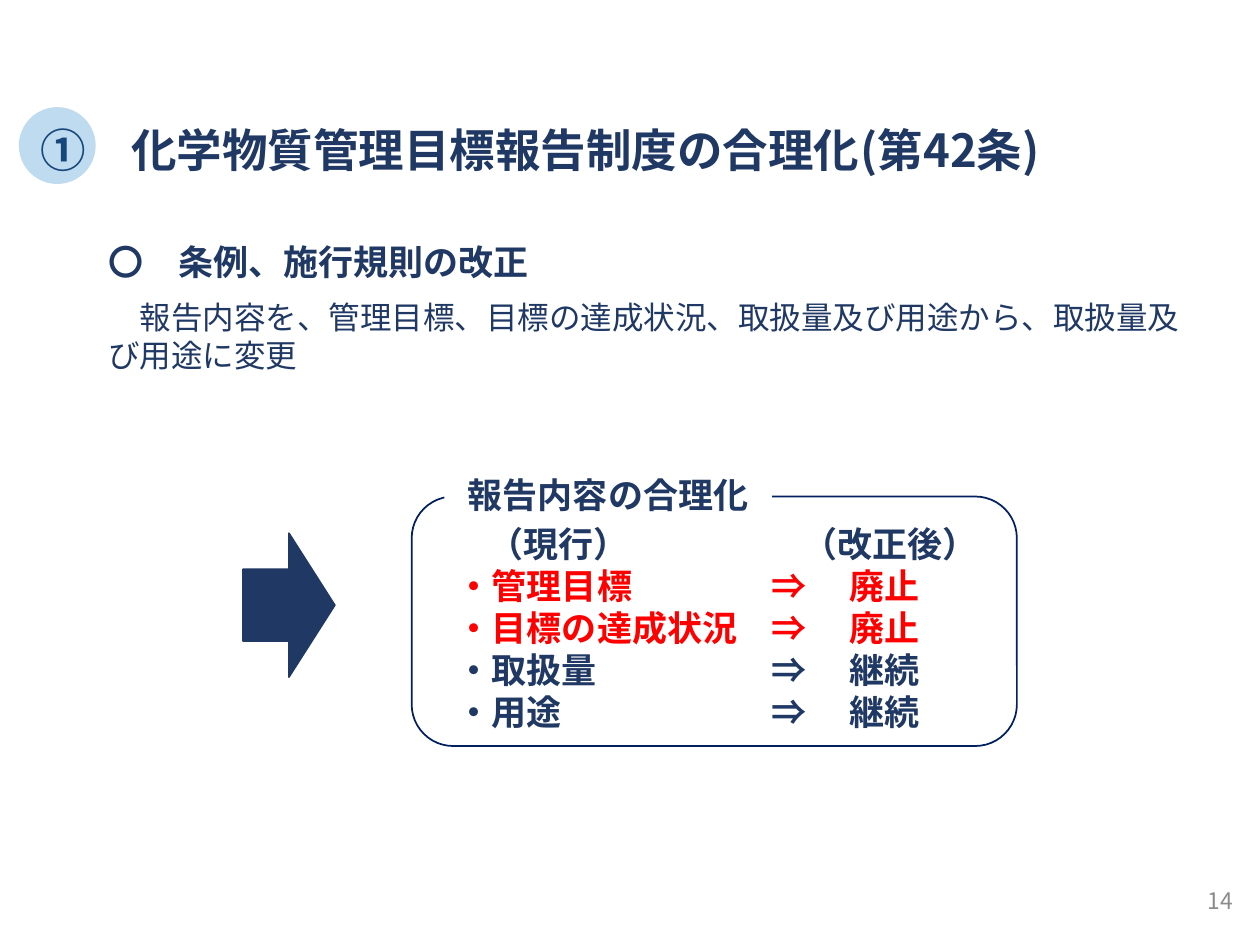
import pptx
import pptx.util
import pptx.dml.color
import pptx.enum.lang
import pptx.enum.shapes
import pptx.enum.text
import pptx.oxml.ns
from lxml import etree

Cm, Pt = pptx.util.Cm, pptx.util.Pt
SHAPE = pptx.enum.shapes.MSO_SHAPE
ALIGN = pptx.enum.text.PP_ALIGN
ANCHOR = pptx.enum.text.MSO_ANCHOR
qn = pptx.oxml.ns.qn
FONT = "Noto Sans CJK JP"
COLORS = {"navy": "203864", "outline": "002060", "badge": "0070C0",
          "red": "FF0000", "gray": "8C8C8C", "white": "FFFFFF"}


def rgb(name):
    """Return the named colour."""
    return pptx.dml.color.RGBColor.from_string(COLORS[name])


def add_run(p, text, size, color="navy", bold=True):
    """Append a formatted Japanese run to a paragraph."""
    r = p.add_run()
    r.text = text
    r.font.size, r.font.bold, r.font.name = Pt(size), bold, FONT
    r.font.color.rgb = rgb(color)
    r.font.language_id = pptx.enum.lang.MSO_LANGUAGE_ID.JAPANESE
    etree.SubElement(r.font._element, qn("a:ea"), typeface=FONT)


def add_tabs(p, stops):
    """Set left tab stops, in centimetres, on a paragraph."""
    tabs = etree.SubElement(p._p.get_or_add_pPr(), qn("a:tabLst"))
    for stop in stops:
        etree.SubElement(tabs, qn("a:tab"), pos=str(Cm(stop)), algn="l")


def add_text(s, x, y, w, h, anchor=ANCHOR.TOP):
    """Add a wrapping text box and return its text frame."""
    tf = s.shapes.add_textbox(Cm(x), Cm(y), Cm(w), Cm(h)).text_frame
    tf.word_wrap, tf.vertical_anchor = True, anchor
    return tf


def add_shape(s, kind, x, y, w, h, fill=None, line=None):
    """Add a flat preset shape with optional fill and line."""
    sp = s.shapes.add_shape(kind, Cm(x), Cm(y), Cm(w), Cm(h))
    sp.shadow.inherit = False
    if fill:
        sp.fill.solid()
        sp.fill.fore_color.rgb = rgb(fill)
    else:
        sp.fill.background()
    if line:
        sp.line.color.rgb, sp.line.width = rgb(line), Pt(1)
    else:
        sp.line.fill.background()
    return sp


def add_title(s, x, y, w, h):
    """Place the numbered title and its translucent badge."""
    tf = add_text(s, x + 0.18, y + 0.18, w - 0.18, h - 0.18)
    add_run(tf.paragraphs[0], "①　化学物質管理目標報告制度の合理化(第42条)", 26)
    sp = add_shape(s, SHAPE.OVAL, x, y, h, h, "badge")
    color = sp.fill._xPr.find(qn("a:solidFill"))[0]
    etree.SubElement(color, qn("a:alpha"), val="25000")


def add_amendment(s, x, y, w, h):
    """Place the heading and explanation of the amendment."""
    tf = add_text(s, x, y, w, h)
    add_run(tf.paragraphs[0], "〇　条例、施行規則の改正", 20)
    p = tf.add_paragraph()
    p.space_before = Pt(9)
    add_run(p, "　報告内容を、管理目標、目標の達成状況、取扱量及び用途から、"
               "取扱量及び用途に変更", 18, bold=False)


def add_comparison(s, x, y, w, h):
    """Place the arrow and the framed before-and-after list."""
    frame_x, frame_y = x + 3.4, y + 0.61
    inner_x = frame_x + 0.66
    tf = add_text(s, inner_x, y + 0.99, 11.18, 4.52, ANCHOR.MIDDLE)
    p = tf.paragraphs[0]
    add_tabs(p, (0.64, 6.96))
    add_run(p, "\t（現行）\t（改正後）", 20)
    rows = (("管理目標", "廃止", "red"), ("目標の達成状況", "廃止", "red"),
            ("取扱量", "継続", "navy"), ("用途", "継続", "navy"))
    for item, result, color in rows:
        p = tf.add_paragraph()
        add_tabs(p, (6.35, 7.92))
        add_run(p, f"・{item}\t⇒\t{result}", 20, color)
    add_shape(s, SHAPE.RIGHT_ARROW, x, y + 1.35, 1.85, 2.9, "navy", "navy")
    add_shape(s, SHAPE.ROUNDED_RECTANGLE, frame_x, frame_y,
              x + w - frame_x, y + h - frame_y, line="outline")
    sp = add_shape(s, SHAPE.RECTANGLE, inner_x, y, 6.6, 1.12, "white")
    tf = sp.text_frame
    tf.word_wrap, tf.vertical_anchor = True, ANCHOR.MIDDLE
    p = tf.paragraphs[0]
    p.alignment = ALIGN.CENTER
    add_run(p, "報告内容の合理化", 20)


def add_page_number(s, x, y, w, h):
    """Place the page number."""
    p = add_text(s, x, y, w, h, ANCHOR.MIDDLE).paragraphs[0]
    p.alignment = ALIGN.RIGHT
    add_run(p, "14", 13, "gray", False)


def main():
    """Build and save the slide."""
    prs = pptx.Presentation()
    prs.slide_width, prs.slide_height = Cm(25.4), Cm(19.05)
    s = prs.slides.add_slide(prs.slide_layouts[6])
    add_title(s, 0.38, 2.16, 24.69, 1.55)
    add_page_number(s, 19.38, 17.65, 5.72, 1.02)
    add_amendment(s, 1.93, 4.72, 22.15, 3.02)
    add_comparison(s, 4.9, 9.4, 15.6, 5.64)
    prs.save("out.pptx")


if __name__ == "__main__":
    main()
